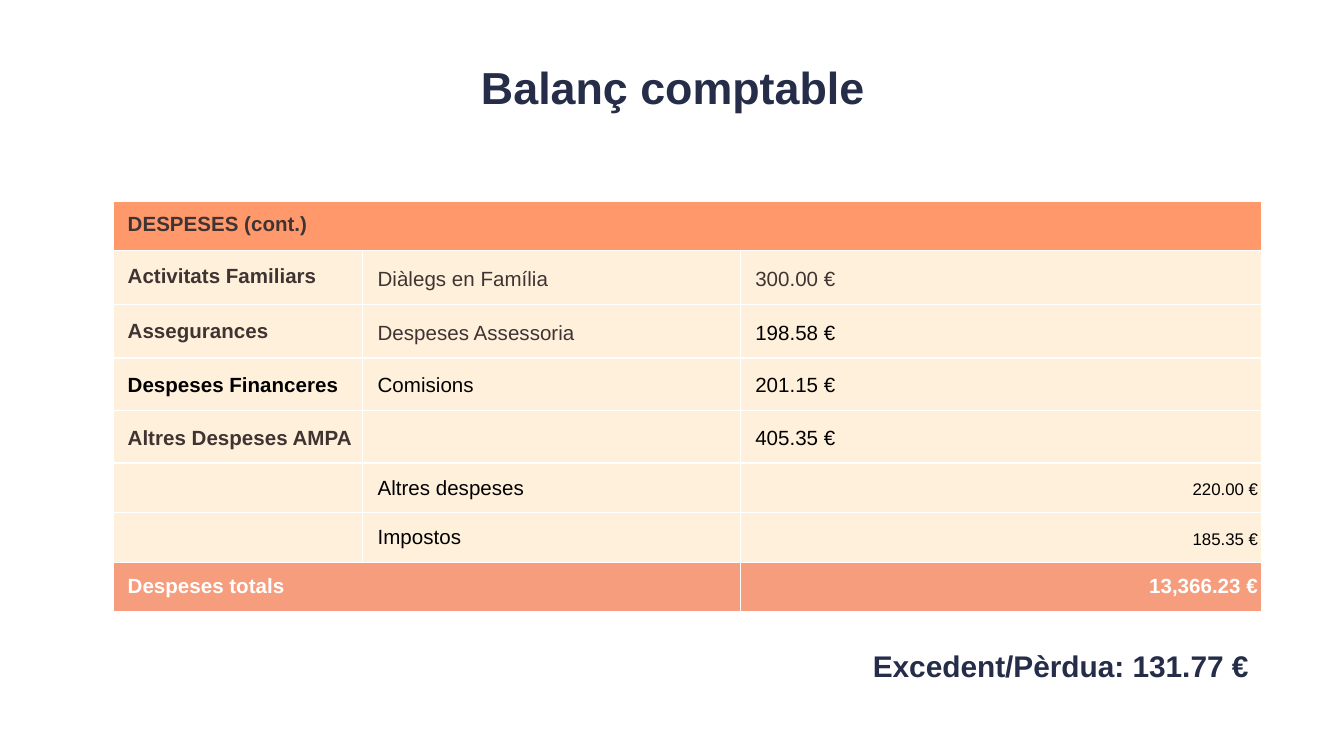
from lxml import etree
from pptx import Presentation
from pptx.dml.color import RGBColor
from pptx.enum.text import MSO_ANCHOR, PP_ALIGN
from pptx.oxml.ns import qn
from pptx.util import Inches, Pt

LEFT, CENTER, RIGHT = PP_ALIGN.LEFT, PP_ALIGN.CENTER, PP_ALIGN.RIGHT
TOP, MIDDLE, BOTTOM = MSO_ANCHOR.TOP, MSO_ANCHOR.MIDDLE, MSO_ANCHOR.BOTTOM

FONT = "Arial"
NAVY = RGBColor(0x25, 0x2D, 0x48)
BROWN = RGBColor(0x40, 0x34, 0x33)
BLACK = RGBColor(0, 0, 0)
WHITE = RGBColor(0xFF, 0xFF, 0xFF)
ORANGE = RGBColor(0xFF, 0x99, 0x6C)
CREAM = RGBColor(0xFF, 0xF0, 0xDB)
SALMON = RGBColor(0xF6, 0x9D, 0x7D)

TITLE = "Balanç comptable"
RESULT = "Excedent/Pèrdua: 131.77 €"

# Cell formats
HEADER = dict(bold=True, color=BROWN, anchor=MIDDLE)
CATEGORY = dict(bold=True, color=BROWN)
CATEGORY_MIDDLE = dict(CATEGORY, anchor=MIDDLE)
CONCEPT = dict(color=BROWN, spacing=1.15)
PLAIN = dict(color=BLACK)
AMOUNT = dict(color=BLACK, spacing=1.15)
SUBAMOUNT = dict(AMOUNT, size=9, align=RIGHT, indent=0)
TOTAL = dict(bold=True, color=WHITE)
EMPTY = ("", {})

# Row height, fill, number of columns the first cell spans, cells
EXPENSES = [
    (0.36, ORANGE, 3, [("DESPESES (cont.)", HEADER), EMPTY, EMPTY]),
    (0.4, CREAM, 1, [("Activitats Familiars", CATEGORY_MIDDLE),
                     ("Diàlegs en Família", CONCEPT),
                     ("300.00 €", dict(AMOUNT, color=BROWN))]),
    (0.4, CREAM, 1, [("Assegurances", dict(CATEGORY_MIDDLE, spacing=1.15)),
                     ("Despeses Assessoria", CONCEPT), ("198.58 €", AMOUNT)]),
    (0.39, CREAM, 1, [("Despeses Financeres", dict(CATEGORY, color=BLACK)),
                      ("Comisions", PLAIN), ("201.15 €", AMOUNT)]),
    (0.39, CREAM, 1, [("Altres Despeses AMPA", CATEGORY), EMPTY,
                      ("405.35 €", AMOUNT)]),
    (0.37, CREAM, 1, [EMPTY, ("Altres despeses", PLAIN), ("220.00 €", SUBAMOUNT)]),
    (0.37, CREAM, 1, [EMPTY, ("Impostos", PLAIN), ("185.35 €", SUBAMOUNT)]),
    (0.36, SALMON, 2, [("Despeses totals", TOTAL), EMPTY,
                       ("13,366.23 €", dict(TOTAL, align=RIGHT))]),
]
COLUMN_WIDTHS = [1.86, 2.81, 3.88]
TABLE_LEFT, TABLE_TOP = 0.84, 1.5


def write(frame, text, size=11, bold=False, color=BLACK, align=LEFT,
          spacing=None, indent=0):
    paragraph = frame.paragraphs[0]
    paragraph.alignment = align
    if spacing:
        paragraph.line_spacing = spacing
    if indent:
        properties = paragraph._p.get_or_add_pPr()
        properties.set("marL", str(Inches(indent)))
        properties.set("indent", "0")
    if not text:
        # Keeps the empty line from making its row taller
        etree.SubElement(paragraph._p, qn("a:endParaRPr"), sz=str(size * 100))
        return
    run = paragraph.add_run()
    run.text = text
    run.font.name = FONT
    run.font.size = Pt(size)
    run.font.bold = bold
    run.font.color.rgb = color


def add_heading(slide, text, left, top, width, height, anchor, **text_format):
    box = slide.shapes.add_textbox(*map(Inches, (left, top, width, height)))
    frame = box.text_frame
    frame.word_wrap = True
    frame.vertical_anchor = anchor
    frame.margin_left = frame.margin_right = Inches(0.1)
    frame.margin_top = frame.margin_bottom = Inches(0.1)
    write(frame, text, bold=True, color=NAVY, **text_format)


def set_borders(cell, color, width):
    properties = cell._tc.get_or_add_tcPr()
    for position, side in enumerate(("lnL", "lnR", "lnT", "lnB")):
        line = etree.Element(qn(f"a:{side}"), w=str(Pt(width)))
        fill = etree.SubElement(line, qn("a:solidFill"))
        etree.SubElement(fill, qn("a:srgbClr"), val=str(color))
        properties.insert(position, line)


def fill_cell(cell, text, fill, anchor=BOTTOM, indent=0.08, **text_format):
    cell.fill.solid()
    cell.fill.fore_color.rgb = fill
    set_borders(cell, WHITE, 0.75)
    cell.vertical_anchor = anchor
    cell.margin_left = cell.margin_right = Inches(0.03)
    cell.margin_top, cell.margin_bottom = Inches(0.08), Inches(0.1)
    write(cell.text_frame, text, indent=indent, **text_format)


def add_expenses(slide):
    heights = [row[0] for row in EXPENSES]
    table = slide.shapes.add_table(
        len(EXPENSES), len(COLUMN_WIDTHS), Inches(TABLE_LEFT), Inches(TABLE_TOP),
        Inches(sum(COLUMN_WIDTHS)), Inches(sum(heights))).table
    table.horz_banding = False
    table.first_row = False
    for column, width in zip(table.columns, COLUMN_WIDTHS):
        column.width = Inches(width)
    for r, (height, fill, span, cells) in enumerate(EXPENSES):
        table.rows[r].height = Inches(height)
        for c, (text, cell_format) in enumerate(cells):
            fill_cell(table.cell(r, c), text, fill, **cell_format)
        if span > 1:
            table.cell(r, 0).merge(table.cell(r, span - 1))


def main():
    presentation = Presentation()
    presentation.slide_width = Inches(10)
    presentation.slide_height = Inches(10) * 9 // 16
    slide = presentation.slides.add_slide(presentation.slide_layouts[6])
    add_heading(slide, TITLE, 0.2, 0.33, 9.61, 0.63, MIDDLE, size=24, align=CENTER)
    add_expenses(slide)
    add_heading(slide, RESULT, 0.83, 4.72, 8.56, 0.63, TOP, size=16, align=RIGHT)
    presentation.save("out.pptx")


if __name__ == "__main__":
    main()
